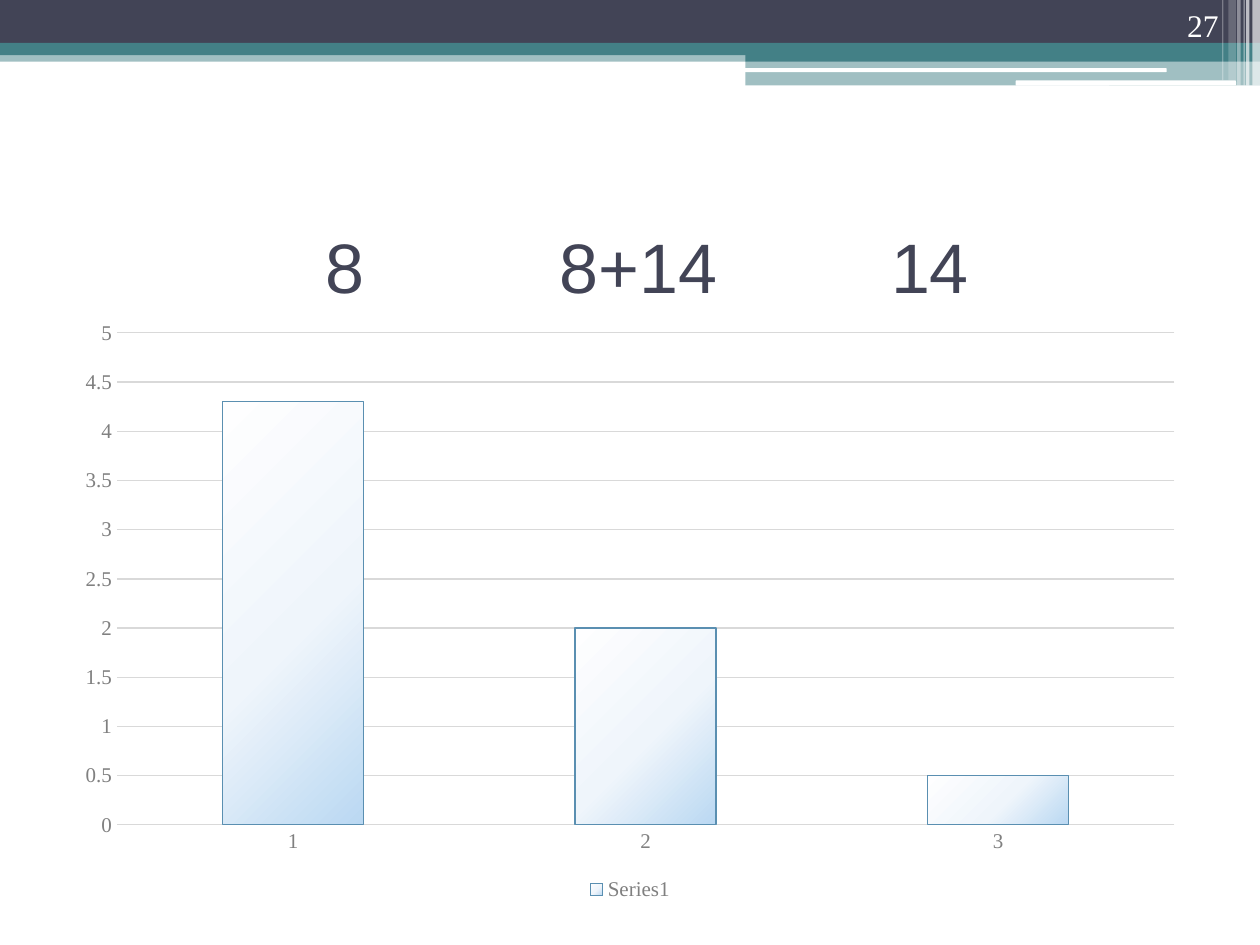
from lxml.etree import SubElement as Sub
from pptx import Presentation
from pptx.chart.data import CategoryChartData as Data
from pptx.dml.color import RGBColor as RGB
from pptx.enum.chart import XL_CHART_TYPE as Kind, XL_LEGEND_POSITION as Place
from pptx.enum.chart import XL_TICK_MARK as Tick
from pptx.enum.shapes import MSO_SHAPE as Form
from pptx.enum.text import MSO_ANCHOR as Anchor, MSO_AUTO_SIZE as Auto, PP_ALIGN as Align
from pptx.oxml import parse_xml
from pptx.oxml.ns import qn
from pptx.util import Pt

NAVY = RGB(0x42, 0x44, 0x56)
TEAL = RGB(0x43, 0x80, 0x86)
WHITE = RGB(0xFF, 0xFF, 0xFF)
BLACK = RGB(0, 0, 0)
GRAY = RGB(0x80, 0x80, 0x80)
PALE = RGB(0xD9, 0xD9, 0xD9)
EDGE = RGB(0x5A, 0x8F, 0xB1)
SHADE = ((0, "FEFEFF"), (55, "EFF5FB"), (100, "BAD8F2"))
SERIF = "Times New Roman"

# Header bands: left, top, width, height, colour, opacity in percent
BANDS = (
    (0, 28.8, 720, 6.5, TEAL, 50),
    (0, 0, 720, 24.5, NAVY, 100),
    (0, 24.5, 720, 7, TEAL, 100),
    (426, 28, 294, 7.2, TEAL, 100),
    (426, 35.2, 294, 13.6, TEAL, 50),
)
# White rounded strips: left, top, width, height
STRIPS = ((425.5, 39, 241.2, 2.2), (580.3, 46, 126, 2.9))
# Upright stripes at the right: left, width, height, opacity in percent
STRIPES = (
    (715.7, 4.3, 49, 65),
    (712, 2, 49, 65),
    (710.6, 0.7, 49, 60),
    (707, 2, 49, 40),
    (702, 4.3, 46, 20),
    (698.4, 0.7, 46, 30),
)


def style(font, size, color, name=SERIF):
    font.size = Pt(size)
    font.name = name
    font.color.rgb = color


def add_bar(slide, box, color, alpha=100, form=Form.RECTANGLE):
    bar = slide.shapes.add_shape(form, *map(Pt, box))
    bar.shadow.inherit = False
    bar.fill.solid()
    bar.fill.fore_color.rgb = color
    bar.line.fill.background()
    if alpha < 100:
        tone = bar._element.spPr.find(qn("a:solidFill"))[0]
        Sub(tone, qn("a:alpha"), val=str(alpha * 1000))


def add_header(slide):
    for *box, color, alpha in BANDS:
        add_bar(slide, box, color, alpha)
    for box in STRIPS:
        add_bar(slide, box, WHITE, form=Form.ROUNDED_RECTANGLE)
    for left, width, height, alpha in STRIPES:
        add_bar(slide, (left, 0, width, height), WHITE, alpha)


def set_title(slide, labels, stops):
    title = slide.shapes.title
    title.left, title.top, title.width, title.height = map(Pt, (36, 90, 648, 123))
    frame = title.text_frame
    frame.text = "".join("\t" + label for label in labels)
    frame.auto_size = Auto.NONE
    frame.vertical_anchor = Anchor.MIDDLE
    para = frame.paragraphs[0]
    para.alignment = Align.LEFT
    style(para.runs[0].font, 40, NAVY, "Arial")
    # One tab stop above each column
    tabs = Sub(para._p.get_or_add_pPr(), qn("a:tabLst"))
    for stop in stops:
        Sub(tabs, qn("a:tab"), pos=str(Pt(stop)), algn="l")


def add_number(slide, text):
    box = slide.shapes.add_textbox(Pt(643.7), Pt(0), Pt(59.8), Pt(28.8))
    frame = box.text_frame
    frame.word_wrap = True
    frame.vertical_anchor = Anchor.BOTTOM
    frame.text = text
    para = frame.paragraphs[0]
    para.alignment = Align.RIGHT
    style(para.runs[0].font, 18, WHITE)


def shade(series):
    """Fill the columns with a three-stop radial gradient."""
    stops = "".join(
        f'<a:gs pos="{pos * 1000}"><a:srgbClr val="{tone}"/></a:gs>'
        for pos, tone in SHADE
    )
    fill = parse_xml(
        '<a:gradFill xmlns:a="http://schemas.openxmlformats.org/drawingml/2006/main"'
        f' rotWithShape="1"><a:gsLst>{stops}</a:gsLst><a:path path="circle">'
        '<a:fillToRect l="-40000" t="-90000" r="140000" b="190000"/>'
        "</a:path></a:gradFill>"
    )
    line = series.format.line
    line.color.rgb = EDGE
    line.width = Pt(0.75)
    series._element.find(qn("c:spPr")).insert(0, fill)


def add_columns(slide, cats, vals):
    data = Data()
    data.categories = cats
    data.add_series("Series1", vals)
    box = map(Pt, (36, 177, 648, 340.5))
    chart = slide.shapes.add_chart(Kind.COLUMN_CLUSTERED, *box, data).chart
    chart.has_title = False
    style(chart.font, 10, BLACK)
    # Legend
    chart.has_legend = True
    chart.legend.position = Place.BOTTOM
    chart.legend.include_in_layout = False
    style(chart.legend.font, 12, GRAY)
    # Axes
    for axis in (chart.category_axis, chart.value_axis):
        axis.major_tick_mark = axis.minor_tick_mark = Tick.NONE
        axis.format.line.fill.background()
        style(axis.tick_labels.font, 12, GRAY)
    axis = chart.value_axis
    axis.minimum_scale, axis.maximum_scale, axis.major_unit = 0, 5, 0.5
    grid = axis.major_gridlines.format.line
    grid.color.rgb = PALE
    grid.width = Pt(0.75)
    # Columns
    plot = chart.plots[0]
    plot.gap_width = 150
    plot.vary_by_categories = False
    shade(plot.series[0])


def main():
    deck = Presentation()
    deck.slide_width, deck.slide_height = Pt(720), Pt(540)
    slide = deck.slides.add_slide(deck.slide_layouts[5])
    add_header(slide)
    set_title(slide, ("8", "8+14", "14"), (143, 276.5, 466))
    add_columns(slide, ("1", "2", "3"), (4.3, 2, 0.5))
    add_number(slide, "27")
    deck.save("out.pptx")


if __name__ == "__main__":
    main()
